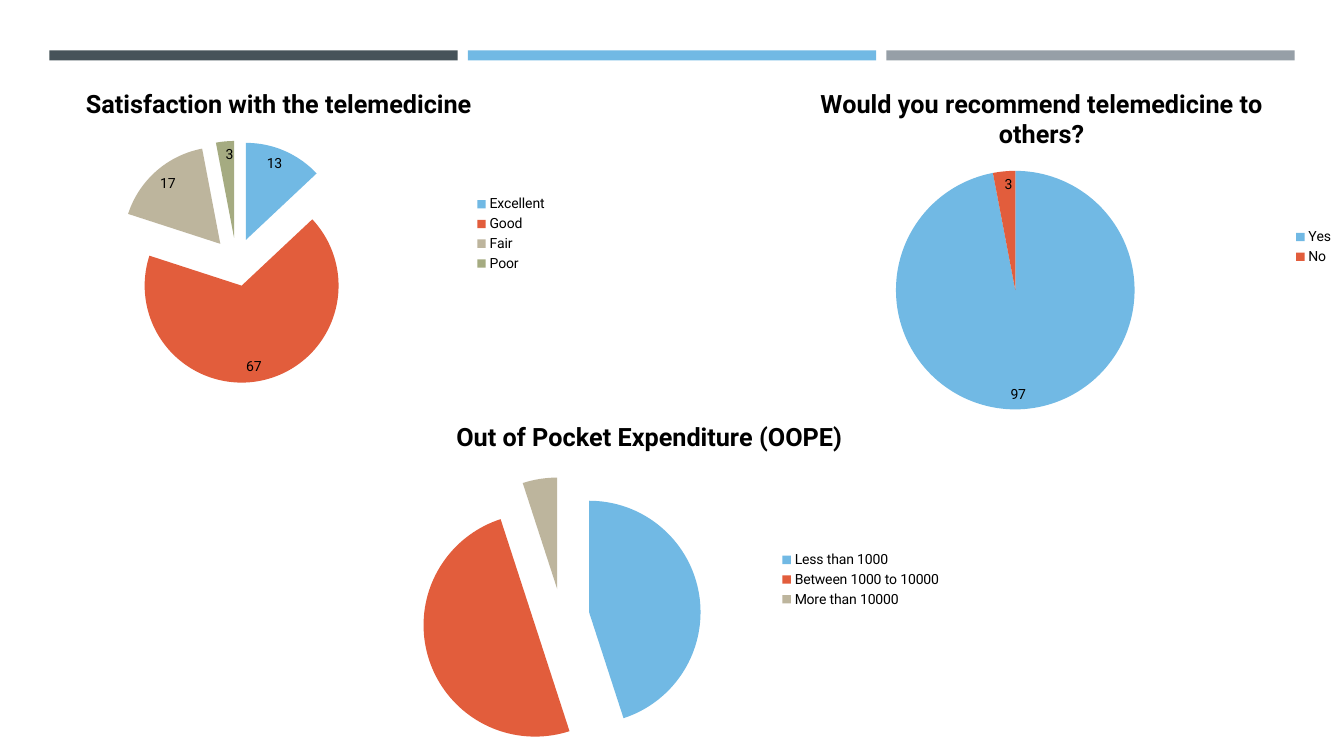
from dataclasses import dataclass

from lxml import etree
from pptx import Presentation
from pptx.chart.data import CategoryChartData
from pptx.dml.color import RGBColor
from pptx.enum.chart import XL_CHART_TYPE, XL_LABEL_POSITION, XL_LEGEND_POSITION
from pptx.enum.shapes import MSO_SHAPE
from pptx.oxml.ns import qn
from pptx.util import Inches, Pt

PIE = XL_CHART_TYPE.PIE
RIGHT = XL_LEGEND_POSITION.RIGHT
INNER = XL_LABEL_POSITION.INSIDE_END
RECT = MSO_SHAPE.RECTANGLE


@dataclass(frozen=True)
class Theme:
    font: str = "Roboto"
    body: int = 10
    title: int = 18
    ink: str = "000000"
    bars: tuple = ("465359", "71B9E4", "969FA7")
    slices: tuple = ("71B9E4", "E25D3C", "BDB59D", "A5AB81")


class Deck:
    def __init__(self, slide, theme):
        self.slide = slide
        self.theme = theme

    def style(self, font, size, bold=False):
        font.name = self.theme.font
        font.size = Pt(size)
        font.bold = bold
        font.color.rgb = RGBColor.from_string(self.theme.ink)

    def bar(self, left, top, width, height, color):
        bar = self.slide.shapes.add_shape(
            RECT, Inches(left), Inches(top), Inches(width), Inches(height))
        bar.shadow.inherit = False
        bar.fill.solid()
        bar.fill.fore_color.rgb = RGBColor.from_string(color)
        bar.line.fill.background()

    def pie(self, box, title, name, values, burst=0, labels=True, plot=None):
        data = CategoryChartData()
        data.categories = list(values)
        data.add_series(name, list(values.values()))
        frame = self.slide.shapes.add_chart(PIE, *map(Inches, box), data)
        chart = frame.chart
        self.style(chart.font, self.theme.body)
        chart.has_title = True
        head = chart.chart_title.text_frame
        head.text = title
        self.style(head.paragraphs[0].font, self.theme.title, True)
        chart.has_legend = True
        chart.legend.position = RIGHT
        chart.legend.include_in_layout = False

        pie = chart.plots[0]
        pie.vary_by_categories = True
        series = pie.series[0]
        for index, color in zip(range(len(values)), self.theme.slices):
            fill = series.points[index].format.fill
            fill.solid()
            fill.fore_color.rgb = RGBColor.from_string(color)
        if burst:
            self.burst(series, burst)
        if labels:
            pie.has_data_labels = True
            pie.data_labels.show_value = True
            pie.data_labels.show_percentage = False
            pie.data_labels.position = INNER
            self.style(pie.data_labels.font, self.theme.body)
        if plot:
            self.place(chart, plot)

    def burst(self, series, amount):
        node = etree.Element(qn("c:explosion"), val=str(amount))
        series._element.find(qn("c:dPt")).addprevious(node)

    def place(self, chart, plot):
        area = chart._chartSpace.find(".//" + qn("c:plotArea"))
        layout = area.find(qn("c:layout"))
        if layout is None:
            layout = etree.Element(qn("c:layout"))
            area.insert(0, layout)
        manual = etree.SubElement(layout, qn("c:manualLayout"))
        rules = [("layoutTarget", "inner"), ("xMode", "edge"), ("yMode", "edge")]
        rules += zip("xywh", map(str, plot))
        for tag, value in rules:
            etree.SubElement(manual, qn("c:" + tag), val=value)


def main():
    show = Presentation()
    show.slide_width = Inches(13.33)
    show.slide_height = Inches(7.5)
    theme = Theme()
    deck = Deck(show.slides.add_slide(show.slide_layouts[6]), theme)

    for index, color in enumerate(theme.bars):
        deck.bar(0.49 + 4.15 * index, 0.5, 4.05, 0.1, color)

    deck.pie((0, 0.7, 5.53, 3.24), "Satisfaction with the telemedicine", "Series 1",
             {"Excellent": 13, "Good": 67, "Fair": 17, "Poor": 3}, burst=25)
    deck.pie((7.33, 0.7, 6, 3.5), "Would you recommend telemedicine to others?",
             "Series 1", {"Yes": 97, "No": 3})
    costs = "Out of Pocket Expenditure (OOPE)"
    deck.pie((3.44, 4, 6, 3.5), costs, costs,
             {"Less than 1000": 45, "Between 1000 to 10000": 50, "More than 10000": 5},
             burst=25, labels=False, plot=(0.03, 0.21, 0.65, 0.79))
    show.save("out.pptx")


if __name__ == "__main__":
    main()
